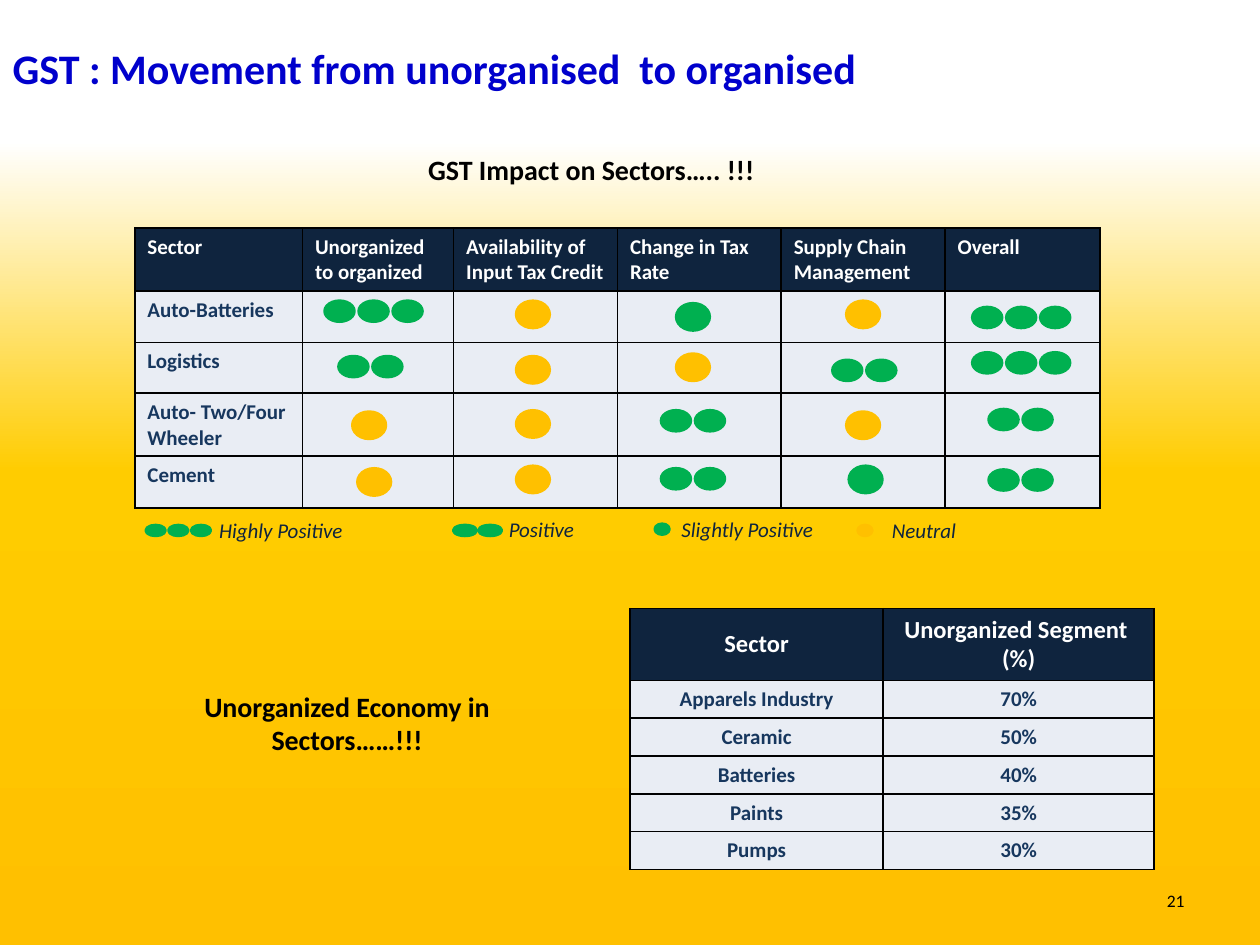
import copy
import lxml.etree
import pptx
import pptx.dml.color
import pptx.enum.shapes
import pptx.enum.text
import pptx.oxml.ns
import pptx.util

Inches, Pt = pptx.util.Inches, pptx.util.Pt
Align, Anchor = pptx.enum.text.PP_ALIGN, pptx.enum.text.MSO_ANCHOR
AutoSize = pptx.enum.text.MSO_AUTO_SIZE

# Content
NAVY, BLUE_TEXT, PALE = "0F243E", "17375E", "E9EDF4"
GREEN, AMBER, BLACK, WHITE = "00B050", "FFC000", "000000", "FFFFFF"
BACKGROUND_STOPS = [(0, AMBER), (0.5, "FFCC00"), (0.85, WHITE)]

TITLE = "GST : Movement from unorganised  to organised"
IMPACT_HEADERS = ["Sector", "Unorganized to organized", "Availability of Input Tax Credit",
                  "Change in Tax Rate", "Supply Chain Management", "Overall"]
# Each rating: number of green dots (0 is one amber dot), left, top
IMPACT_RATINGS = {
    "Auto-Batteries": [(3, 2.58, 2.39), (0, 4.1, 2.39), (1, 5.37, 2.41),
                       (0, 6.72, 2.39), (3, 7.72, 2.44)],
    "Logistics": [(2, 2.69, 2.83), (0, 4.1, 2.83), (0, 5.37, 2.81),
                  (2, 6.61, 2.86), (3, 7.72, 2.8)],
    "Auto- Two/Four Wheeler": [(0, 2.8, 3.27), (0, 4.1, 3.26), (2, 5.25, 3.26),
                               (0, 6.72, 3.27), (2, 7.85, 3.25)],
    "Cement": [(0, 2.84, 3.72), (0, 4.1, 3.7), (2, 5.25, 3.72),
               (1, 6.74, 3.7), (2, 7.85, 3.73)],
}
# Label, label left, label top, dots, dots left, dots top, dot width, pitch
LEGEND = [
    ("Highly Positive", 1.64, 4.06, 3, 1.16, 4.17, 0.15, 0.18),
    ("Positive", 3.94, 4.05, 2, 3.6, 4.17, 0.18, 0.2),
    ("Slightly Positive", 5.31, 4.05, 1, 5.2, 4.16, 0.11, 0),
    ("Neutral", 6.98, 4.06, 0, 6.81, 4.17, 0.11, 0),
]
SEGMENT_ROWS = [("Sector", "Unorganized Segment  (%)"), ("Apparels Industry", "70%"),
                ("Ceramic", "50%"), ("Batteries", "40%"), ("Paints", "35%"), ("Pumps", "30%")]


def color(value):
    return pptx.dml.color.RGBColor.from_string(value)


def write(text_frame, text, size, text_color, bold=False, italic=False, align=Align.LEFT):
    text_frame.text = text
    paragraph = text_frame.paragraphs[0]
    paragraph.alignment = align
    for run in paragraph.runs:
        font = run.font
        font.name, font.size, font.bold, font.italic = "Calibri", Pt(size), bold, italic
        font.color.rgb = color(text_color)


def add_text(slide, box, text, size, text_color, **style):
    shape = slide.shapes.add_textbox(*map(Inches, box))
    shape.text_frame.word_wrap = True
    shape.text_frame.auto_size = AutoSize.SHAPE_TO_FIT_TEXT
    write(shape.text_frame, text, size, text_color, **style)
    return shape


def add_dots(slide, count, left, top, width, height, pitch):
    dot_color = GREEN if count else AMBER
    for index in range(max(count, 1)):
        dot = slide.shapes.add_shape(
            pptx.enum.shapes.MSO_SHAPE.OVAL, Inches(left + index * pitch), Inches(top),
            Inches(width), Inches(height))
        dot.shadow.inherit = False
        dot.fill.solid()
        dot.fill.fore_color.rgb = color(dot_color)
        dot.line.color.rgb = color(dot_color)
        dot.line.width = Pt(2)


def add_borders(cell):
    properties = cell._tc.get_or_add_tcPr()
    for index, side in enumerate(("lnL", "lnR", "lnT", "lnB")):
        line = lxml.etree.Element(pptx.oxml.ns.qn("a:" + side), w=str(Pt(1)))
        fill = lxml.etree.SubElement(line, pptx.oxml.ns.qn("a:solidFill"))
        lxml.etree.SubElement(fill, pptx.oxml.ns.qn("a:srgbClr"), val=BLACK)
        properties.insert(index, line)


def add_table(slide, left, top, widths, heights, rows, header_size, align, anchor):
    table = slide.shapes.add_table(
        len(rows), len(widths), Inches(left), Inches(top),
        Inches(sum(widths)), Inches(sum(heights))).table
    for column, width in zip(table.columns, widths):
        column.width = Inches(width)
    for row_index, (texts, height) in enumerate(zip(rows, heights)):
        table.rows[row_index].height = Inches(height)
        header = row_index == 0
        for column_index, text in enumerate(texts):
            cell = table.cell(row_index, column_index)
            cell.fill.solid()
            cell.fill.fore_color.rgb = color(NAVY if header else PALE)
            cell.vertical_anchor = anchor
            add_borders(cell)
            if text:
                write(cell.text_frame, text, header_size if header else 12,
                      WHITE if header else BLUE_TEXT, bold=True, align=align)


def set_background(slide):
    fill = slide.background.fill
    fill.gradient()
    fill.gradient_angle = 90
    stop_list = slide.element.find(".//" + pptx.oxml.ns.qn("a:gsLst"))
    stop_list.append(copy.deepcopy(stop_list[0]))
    for stop, (position, value) in zip(fill.gradient_stops, BACKGROUND_STOPS):
        stop.position = position
        stop.color.rgb = color(value)


def main():
    presentation = pptx.Presentation()
    presentation.slide_width, presentation.slide_height = Inches(10), Inches(7.5)
    slide = presentation.slides.add_slide(presentation.slide_layouts[5])
    set_background(slide)

    # Title and headings
    title = slide.shapes.title
    title.left, title.top, title.width, title.height = map(Inches, (0, 0.29, 7.11, 0.5))
    title.text_frame.auto_size = AutoSize.NONE
    title.text_frame.vertical_anchor = Anchor.TOP
    write(title.text_frame, TITLE, 24, "0000CC", bold=True)
    add_text(slide, (3.3, 1.16, 3.09, 0.37), "GST Impact on Sectors….. !!!", 16, BLACK, bold=True)
    add_text(slide, (1.17, 5.42, 3.17, 0.64), "Unorganized Economy in Sectors……!!!", 16, BLACK,
             bold=True, align=Align.CENTER)

    # Sector impact table with its rating dots
    impact_rows = [IMPACT_HEADERS] + [[sector] + [""] * 5 for sector in IMPACT_RATINGS]
    add_table(slide, 1.07, 1.81, [1.33, 1.2, 1.3, 1.3, 1.3, 1.23], [0.5, 0.41, 0.4, 0.5, 0.41],
              impact_rows, 12, Align.LEFT, Anchor.TOP)
    for ratings in IMPACT_RATINGS.values():
        for count, left, top in ratings:
            width, height = (0.23, 0.16) if count > 1 else (0.26, 0.21)
            add_dots(slide, count, left, top, width, height, 0.27)

    # Legend
    for label, label_left, label_top, count, left, top, width, pitch in LEGEND:
        add_dots(slide, count, left, top, width, 0.08, pitch)
        add_text(slide, (label_left, label_top, 1.3, 0.3), label, 12, NAVY, italic=True)

    # Unorganized segment table
    add_table(slide, 5, 4.83, [2.01, 2.15], [0.57] + [0.3] * 5, SEGMENT_ROWS, 14,
              Align.CENTER, Anchor.MIDDLE)

    # Slide number
    number = add_text(slide, (7.17, 6.95, 2.33, 0.4), "21", 10, BLACK, align=Align.RIGHT)
    number.text_frame.auto_size = AutoSize.NONE
    number.text_frame.vertical_anchor = Anchor.MIDDLE

    presentation.save("out.pptx")


if __name__ == "__main__":
    main()
